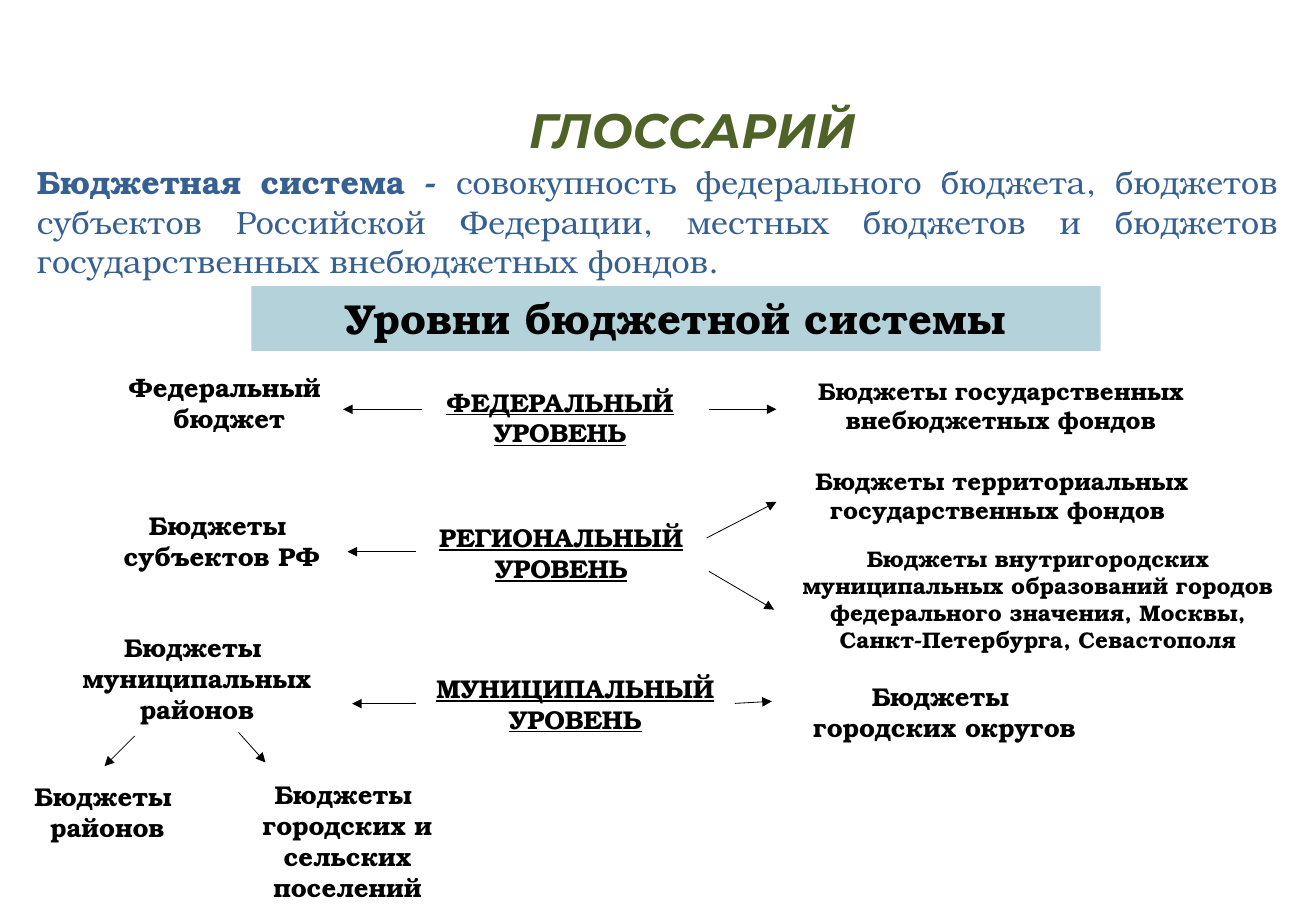
from lxml import etree
from pptx import Presentation
from pptx import util as u
from pptx.dml.color import RGBColor
from pptx.enum import shapes, text
from pptx.oxml.ns import qn

SERIF, SANS = "TeX Gyre Bonum", "Montserrat"
BLACK, WHITE, BLUE, GREEN, TEAL = "000000", "FFFFFF", "376092", "4F6228", "31859C"
TOP, MIDDLE = text.MSO_ANCHOR.TOP, text.MSO_ANCHOR.MIDDLE

# Content: positions are left, top, width, height in cm
TITLE = "ГЛОССАРИЙ"
TERM = "Бюджетная система - "
MEANING = ("совокупность федерального бюджета, бюджетов субъектов Российской Федерации, "
           "местных бюджетов и бюджетов государственных внебюджетных фондов.")
HEADING = "Уровни бюджетной системы"

BUDGETS = [  # text, position, size, anchor
    ("Федеральный\n бюджет", (2.31, 7.87, 5.23, 1.93), 16, MIDDLE),
    ("Бюджеты государственных внебюджетных фондов", (17.12, 8.1, 9.65, 1.6), 15, TOP),
    ("Бюджеты \nсубъектов РФ", (2.11, 11.02, 5.51, 1.68), 16, TOP),
    ("Бюджеты территориальных государственных фондов ", (17.15, 10.08, 9.63, 1.6), 15, TOP),
    ("Бюджеты внутригородских муниципальных образований городов федерального значения, "
     "Москвы, Санкт-Петербурга, Севастополя", (17.09, 11.79, 11.33, 2.72), 14, TOP),
    ("Бюджеты \nмуниципальных районов", (1.12, 13.69, 6.4, 2.36), 16, TOP),
    ("Бюджеты \nгородских округов", (17.09, 14.78, 7.24, 1.68), 16, TOP),
    ("Бюджеты \nрайонов", (0.3, 17.02, 4.11, 1.55), 16, MIDDLE),
    ("Бюджеты \nгородских и сельских поселений", (5.03, 16.92, 5.18, 3.05), 16, TOP),
]
LEVELS = [
    ("ФЕДЕРАЛЬНЫЙ УРОВЕНЬ", (9.22, 8.18, 6.12, 1.93)),
    ("РЕГИОНАЛЬНЫЙ УРОВЕНЬ", (9.32, 11.15, 5.97, 1.93)),
    ("МУНИЦИПАЛЬНЫЙ УРОВЕНЬ", (9.12, 14.45, 6.99, 1.93)),
]
ARROWS = [  # x1, y1, x2, y2
    (9.25, 8.97, 7.52, 8.97), (15.54, 8.97, 17.02, 8.97),
    (9.12, 12.09, 7.62, 12.09), (15.49, 11.79, 17.02, 11),
    (15.54, 12.52, 16.97, 13.36),
    (2.95, 16.13, 2.29, 16.79), (5.23, 16.05, 5.82, 16.71),
]
MUNICIPAL_ARROWS = [  # side of the level box, then arrow
    (1, (9.12, 15.42, 7.72, 15.42)), (3, (16.11, 15.37, 16.92, 15.37)),
]


def rgb(value):
    return RGBColor.from_string(value)


def style(sp, size, color=BLACK, font=SERIF, anchor=TOP, align=text.PP_ALIGN.CENTER):
    tf = sp.text_frame
    tf.word_wrap, tf.vertical_anchor = True, anchor
    tf.margin_left = tf.margin_right = u.Cm(0.3)
    tf.margin_top = tf.margin_bottom = u.Cm(0.15)
    for p in tf.paragraphs:
        p.alignment = align
        for r in p.runs:
            r.font.name, r.font.size, r.font.bold = font, u.Pt(size), True
            r.font.color.rgb = rgb(color)
    return tf.paragraphs[0]


def add_text(s, pos):
    return s.shapes.add_textbox(*map(u.Cm, pos))


def add_box(s, words, pos, size, fill, opacity, anchor=TOP):
    sp = s.shapes.add_shape(shapes.MSO_SHAPE.RECTANGLE, *map(u.Cm, pos))
    sp.shadow.inherit = False
    sp.line.fill.background()
    sp.fill.solid()
    sp.fill.fore_color.rgb = rgb(fill)
    color = sp.fill._xPr.find(".//" + qn("a:srgbClr"))
    etree.SubElement(color, qn("a:alpha"), val=str(opacity * 1000))
    sp.text_frame.text = words
    style(sp, size, anchor=anchor)
    return sp


def add_arrow(s, ends):
    c = s.shapes.add_connector(shapes.MSO_CONNECTOR.STRAIGHT, *map(u.Cm, ends))
    c.line.color.rgb = rgb(BLACK)
    c.line.width = u.Pt(0.5)
    etree.SubElement(c.line._get_or_add_ln(), qn("a:tailEnd"), type="triangle")
    etree.SubElement(c._element.spPr, qn("a:effectLst"))
    return c


prs = Presentation()
prs.slide_width, prs.slide_height = u.Cm(28.85), u.Cm(20.14)
s = prs.slides.add_slide(prs.slide_layouts[6])

# Title
sp = add_text(s, (5.03, 1.57, 20.29, 2.06))
sp.text_frame.text = TITLE
p = style(sp, 30, GREEN, SANS, MIDDLE)
p.line_spacing = u.Pt(49.4)
p.runs[0].font.italic = True

# Definition
sp = add_text(s, (0.51, 3.38, 27.81, 3))
p = sp.text_frame.paragraphs[0]
for words in (TERM, MEANING):
    p.add_run().text = words
style(sp, 20, BLUE, align=text.PP_ALIGN.JUSTIFY)
p.line_spacing = u.Pt(24.7)
p.runs[1].font.bold = False

# Heading band
add_box(s, HEADING, (5.51, 6.27, 18.62, 1.42), 26, TEAL, 37)

# Budgets and levels
for words, pos, size, anchor in BUDGETS:
    add_box(s, words, pos, size, WHITE, 69, anchor)
for words, pos in LEVELS:
    level = add_box(s, words, pos, 16, WHITE, 69, MIDDLE)
    level.text_frame.paragraphs[0].runs[0].font.underline = True

# Arrows; the municipal ones start at the last level box
for ends in ARROWS:
    add_arrow(s, ends)
for side, ends in MUNICIPAL_ARROWS:
    add_arrow(s, ends).begin_connect(level, side)

prs.save("out.pptx")
